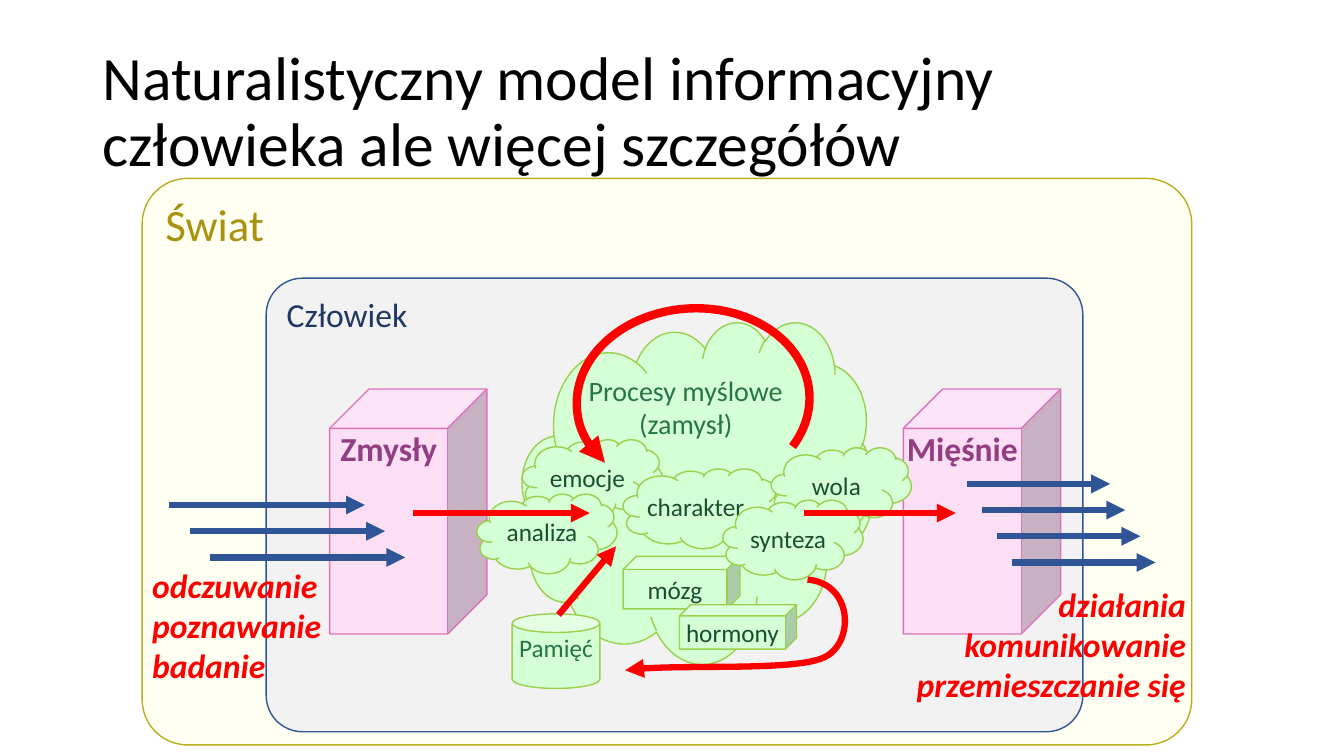
from dataclasses import dataclass

from lxml import etree
from pptx import Presentation
from pptx import util as u
from pptx.dml.color import RGBColor
from pptx.enum import shapes, text
from pptx.oxml import ns

KIND = shapes.MSO_SHAPE
TOP, MID = text.MSO_ANCHOR.TOP, text.MSO_ANCHOR.MIDDLE
LEFT, MIDST, RIGHT = text.PP_ALIGN.LEFT, text.PP_ALIGN.CENTER, text.PP_ALIGN.RIGHT


@dataclass(frozen=True)
class Theme:
    font: str = "Calibri"
    title: int = 44
    world: int = 32
    head: int = 24
    mind: int = 20
    small: int = 18
    thin: float = 1
    thick: float = 4.5
    heavy: float = 6
    black: str = "000000"
    red: str = "FF0000"
    blue: str = "2F5597"
    navy: str = "203864"
    grey: str = "F2F2F2"
    cream: str = "FFFFF2"
    gold: str = "BBAD1D"
    ochre: str = "A9920F"
    pink: str = "FCDEF5"
    rose: str = "DD73BC"
    plum: str = "923E83"
    mint: str = "D5FFD4"
    lime: str = "99D14D"
    green: str = "257549"
    dark: str = "194F31"


def rgb(code):
    return RGBColor.from_string(code)


def write(frame, lines, size, color, font, align=LEFT, anchor=TOP,
          bold=False, italic=False, inset=None, lead=None, soft=False):
    """Fill a frame with lines; soft keeps them in one paragraph."""
    frame.word_wrap = True
    frame.vertical_anchor = anchor
    if inset is not None:
        frame.margin_left = frame.margin_right = u.Inches(inset)
        frame.margin_top = frame.margin_bottom = u.Inches(inset)
    para = frame.paragraphs[0]
    for n, line in enumerate(lines):
        if n and soft:
            para.add_line_break()
        elif n:
            para = frame.add_paragraph()
        para.alignment = align
        if lead:
            para.line_spacing = lead
        run = para.add_run()
        run.text = line
        run.font.name, run.font.size = font, u.Pt(size)
        run.font.bold, run.font.italic = bold, italic
        run.font.color.rgb = rgb(color)


def bend(start, one, two, end, steps=24):
    """Points along a cubic curve, without its start."""
    for n in range(1, steps + 1):
        t = n / steps
        s = 1 - t
        yield tuple(s**3 * a + 3 * s * s * t * b + 3 * s * t * t * c + t**3 * d
                    for a, b, c, d in zip(start, one, two, end))


class Board:
    def __init__(self, slide, theme):
        self.items = slide.shapes
        self.theme = theme

    def block(self, kind, box, fill, edge, lines, size, color, adjust=None, **form):
        item = self.items.add_shape(kind, *map(u.Inches, box))
        item.shadow.inherit = False
        item.fill.solid()
        item.fill.fore_color.rgb = rgb(fill)
        item.line.color.rgb = rgb(edge)
        item.line.width = u.Pt(self.theme.thin)
        if adjust is not None:
            item.adjustments[0] = adjust
        write(item.text_frame, lines, size, color, self.theme.font, **form)

    def thought(self, kind, box, lines, size=None, color=None, anchor=MID):
        """A green element of the mind."""
        t = self.theme
        self.block(kind, box, t.mint, t.lime, lines, size or t.small,
                   color or t.dark, align=MIDST, anchor=anchor, inset=0)

    def label(self, box, lines, size, color, **form):
        item = self.items.add_textbox(*map(u.Inches, box))
        write(item.text_frame, lines, size, color, self.theme.font, **form)

    def tip(self, item, color, width):
        """Style a line and end it with an arrowhead."""
        item.line.color.rgb = rgb(color)
        item.line.width = u.Pt(width)
        etree.SubElement(item.line._get_or_add_ln(), ns.qn("a:tailEnd"), type="triangle")

    def arrow(self, start, end, color):
        item = self.items.add_connector(
            shapes.MSO_CONNECTOR.STRAIGHT, *map(u.Inches, (*start, *end)))
        self.tip(item, color, self.theme.thick)
        etree.SubElement(item._element.spPr, ns.qn("a:effectLst"))

    def curve(self, start, *arcs):
        pen = self.items.build_freeform(*map(u.Inches, start))
        for arc in arcs:
            dots = [tuple(map(u.Inches, dot)) for dot in bend(start, *arc)]
            pen.add_line_segments(dots, close=False)
            start = arc[-1]
        item = pen.convert_to_shape()
        item.shadow.inherit = False
        item.fill.background()
        self.tip(item, self.theme.red, self.theme.thick)

    def loop(self, box, turn, first, last):
        item = self.items.add_shape(KIND.ARC, *map(u.Inches, box))
        item.shadow.inherit = False
        item.fill.background()
        item.adjustments[0], item.adjustments[1] = first, last
        item.rotation = turn
        item._element.spPr.find(ns.qn("a:xfrm")).set("flipV", "1")
        self.tip(item, self.theme.red, self.theme.heavy)


def main():
    deck = Presentation()
    deck.slide_width, deck.slide_height = u.Inches(13.33), u.Inches(7.5)
    t = Theme()
    board = Board(deck.slides.add_slide(deck.slide_layouts[6]), t)

    board.block(KIND.ROUNDED_RECTANGLE, (1.41, 1.77, 10.41, 5.62), t.cream, t.gold,
                ["Świat"], t.world, t.ochre, adjust=0.08)
    board.block(KIND.ROUNDED_RECTANGLE, (2.64, 2.76, 8.1, 4.5), t.grey, t.blue,
                ["Człowiek"], t.head, t.navy, adjust=0.08)
    for left, name in ((8.96, "Mięśnie"), (3.27, "Zmysły")):
        board.block(KIND.CUBE, (left, 3.86, 1.56, 2.43), t.pink, t.rose, [name],
                    t.head, t.plum, align=MIDST, bold=True, inset=0)

    # Signals: left, top, length, count, shift to the right per row
    for left, top, span, count, shift in ((9.59, 4.8, 1.42, 4, 0.15),
                                          (1.68, 5.01, 1.94, 3, 0.2)):
        for n in range(count):
            x, y = left + n * shift, top + n * 0.26
            board.arrow((x, y), (x + span, y), t.blue)

    board.thought(KIND.CLOUD, (5.18, 3.19, 3.49, 3.39), ["Procesy myślowe", "(zamysł)"],
                  t.mind, t.green, TOP)
    board.thought(KIND.CUBE, (6.18, 5.52, 1.16, 0.52), ["mózg"])
    for left, top, wide, name in ((5.18, 4.36, 1.39, "emocje"),
                                  (4.73, 4.9, 1.39, "analiza"),
                                  (6.18, 4.65, 1.55, "charakter"),
                                  (7.65, 4.44, 1.39, "wola"),
                                  (7.17, 4.96, 1.39, "synteza")):
        board.thought(KIND.CLOUD, (left, top, wide, 0.79), [name])
    board.thought(KIND.CUBE, (6.74, 6, 1.16, 0.44), ["hormony"])
    board.thought(KIND.CAN, (5.08, 6.09, 0.87, 0.74), ["Pamięć"], color=t.green, anchor=TOP)

    board.arrow((7.97, 5.09), (9.48, 5.09), t.red)
    board.arrow((4.1, 5.09), (5.85, 5.09), t.red)
    board.curve((8.01, 5.75),
                ((8.46, 5.79), (8.48, 6.37), (8.18, 6.52)),
                ((7.88, 6.67), (6.66, 6.58), (6.2, 6.65)))
    board.arrow((5.54, 6.1), (6.11, 5.42), t.red)
    board.loop((5.72, 3.06, 2.31, 1.83), 176.6, 91.06, 19.07)

    board.label((0.92, 0.4, 11.5, 1.45),
                ["Naturalistyczny model informacyjny", "człowieka ale więcej szczegółów"],
                t.title, t.black, anchor=MID, lead=0.9, soft=True)
    board.label((1.41, 5.55, 2.31, 1.31), ["odczuwanie", "poznawanie", "badanie"],
                t.head, t.red, bold=True, italic=True)
    board.label((8.88, 5.74, 2.98, 1.31),
                ["działania", "komunikowanie", "przemieszczanie się"],
                t.head, t.red, align=RIGHT, bold=True, italic=True)
    deck.save("out.pptx")


if __name__ == "__main__":
    main()
